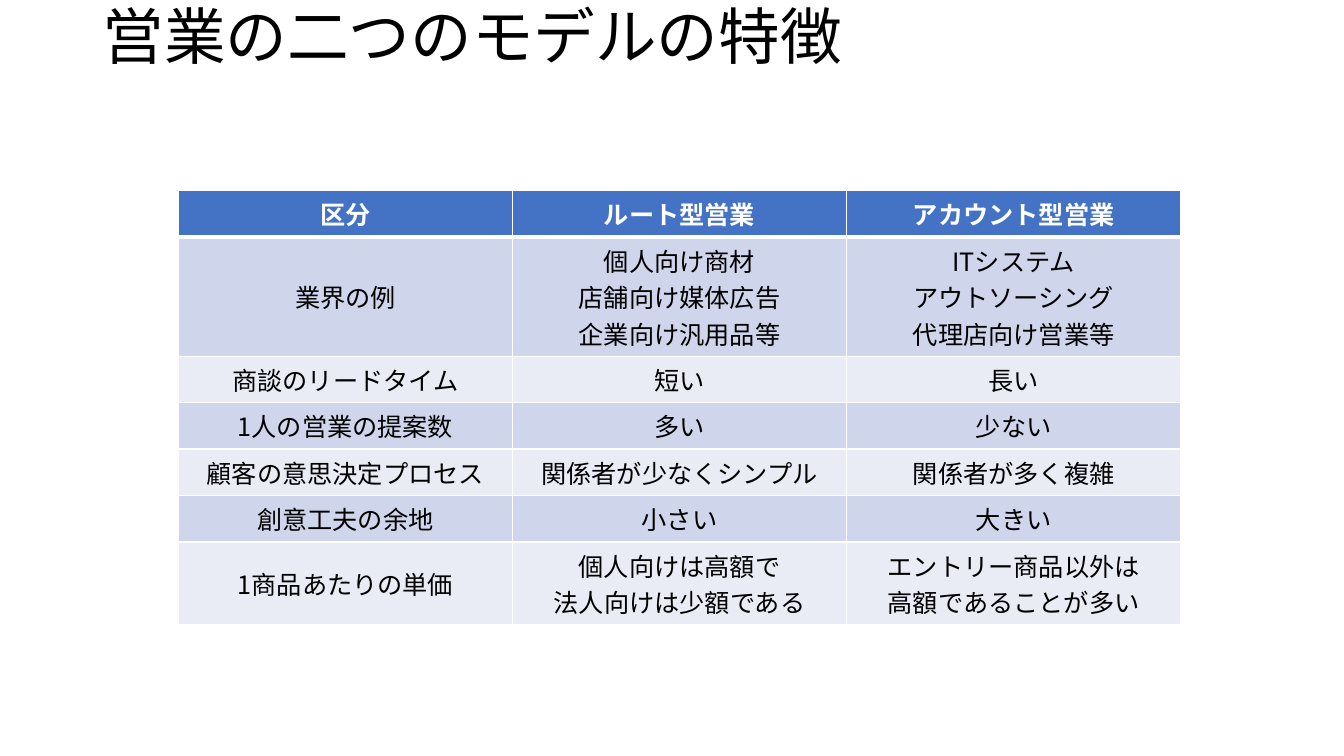
from dataclasses import dataclass

from lxml.etree import SubElement
from pptx import Presentation
from pptx.dml.color import RGBColor as Color
from pptx.enum.text import MSO_ANCHOR as Anchor, PP_ALIGN as Align
from pptx.oxml.ns import qn
from pptx.util import Pt


@dataclass(frozen=True)
class Theme:
    font: str = "Noto Sans CJK JP"
    title_size: int = 44
    table_size: int = 18
    line_height: int = 26
    cell_padding: float = 7.2
    text: str = "000000"
    header_text: str = "FFFFFF"
    header_fill: str = "4472C4"
    bands: tuple = ("CFD5EA", "E9EBF5")
    border: str = "FFFFFF"
    border_width: int = 1
    header_rule_width: int = 3


THEME = Theme()
TITLE = "営業の二つのモデルの特徴"
# "\n" starts a paragraph, "\v" breaks a line within one.
ROWS = [
    ("区分", "ルート型営業", "アカウント型営業"),
    ("業界の例", "個人向け商材\n店舗向け媒体広告\n企業向け汎用品等",
     "ITシステム\vアウトソーシング\v代理店向け営業等"),
    ("商談のリードタイム", "短い", "長い"),
    ("1人の営業の提案数", "多い", "少ない"),
    ("顧客の意思決定プロセス", "関係者が少なくシンプル", "関係者が多く複雑"),
    ("創意工夫の余地", "小さい", "大きい"),
    ("1商品あたりの単価", "個人向けは高額で\n法人向けは少額である",
     "エントリー商品以外は\v高額であることが多い"),
]


def style_paragraph(para, size, color, align, bold=False):
    """Set the font for Latin and East Asian text, and the alignment."""
    para.alignment = align
    font = para.font
    font.name, font.size, font.bold = THEME.font, Pt(size), bold
    font.color.rgb = Color.from_string(color)
    defaults = para._p.pPr.find(qn("a:defRPr"))
    SubElement(defaults, qn("a:ea"), typeface=THEME.font)


def add_border(cell, side, width):
    properties = cell._tc.get_or_add_tcPr()
    line = SubElement(properties, qn(f"a:ln{side}"), w=str(Pt(width)))
    fill = SubElement(line, qn("a:solidFill"))
    SubElement(fill, qn("a:srgbClr"), val=THEME.border)


def add_title(page, left, top, width, height):
    box = page.shapes.add_textbox(Pt(left), Pt(top), Pt(width), Pt(height))
    frame = box.text_frame
    frame.word_wrap = True
    frame.vertical_anchor = Anchor.MIDDLE
    frame.text = TITLE
    para = frame.paragraphs[0]
    para.line_spacing = 0.9
    style_paragraph(para, THEME.title_size, THEME.text, Align.LEFT)


def fill_cell(cell, text, row):
    header = row == 0
    thin, thick = THEME.border_width, THEME.header_rule_width
    for side, width in (("L", thin), ("R", thin),
                        ("T", thick if row == 1 else thin),
                        ("B", thick if header else thin)):
        add_border(cell, side, width)
    cell.fill.solid()
    fill = THEME.header_fill if header else THEME.bands[(row - 1) % 2]
    cell.fill.fore_color.rgb = Color.from_string(fill)
    cell.vertical_anchor = Anchor.MIDDLE
    cell.text = text
    color = THEME.header_text if header else THEME.text
    for para in cell.text_frame.paragraphs:
        style_paragraph(para, THEME.table_size, color, Align.CENTER, header)


def row_height(texts):
    """Return the height that the row's tallest cell needs."""
    lines = max(len(text.splitlines()) for text in texts)
    return THEME.cell_padding + THEME.line_height * lines


def add_comparison(page, left, top, width):
    heights = [row_height(texts) for texts in ROWS]
    table = page.shapes.add_table(len(ROWS), len(ROWS[0]), Pt(left), Pt(top),
                                  Pt(width), Pt(sum(heights))).table
    for row, texts in enumerate(ROWS):
        table.rows[row].height = Pt(heights[row])
        for column, text in enumerate(texts):
            fill_cell(table.cell(row, column), text, row)


def main():
    deck = Presentation()
    deck.slide_width, deck.slide_height = Pt(960), Pt(540)
    page = deck.slides.add_slide(deck.slide_layouts[6])
    add_title(page, left=66.2, top=0, width=828, height=57)
    add_comparison(page, left=127.4, top=136, width=716)
    deck.save("out.pptx")


if __name__ == "__main__":
    main()
